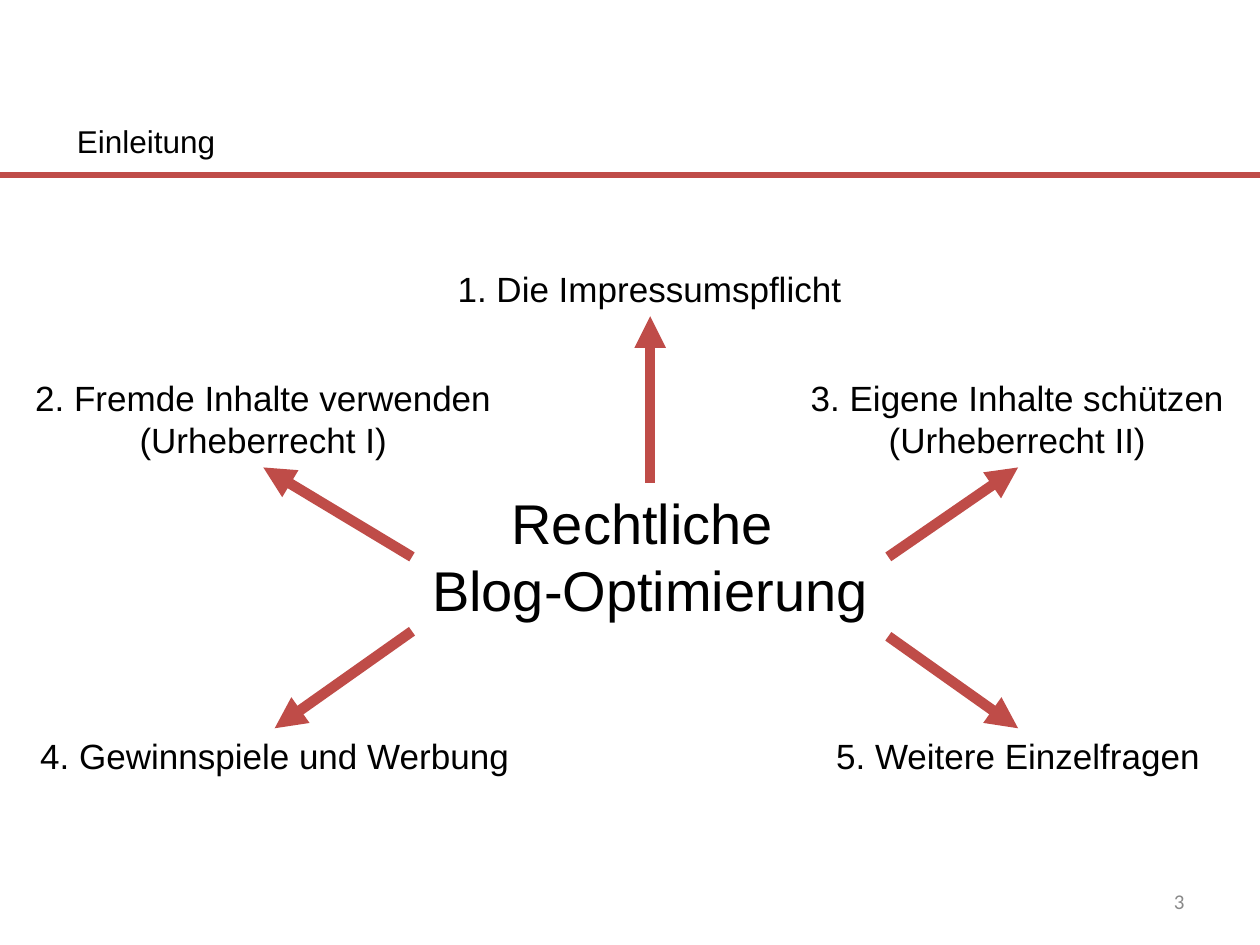
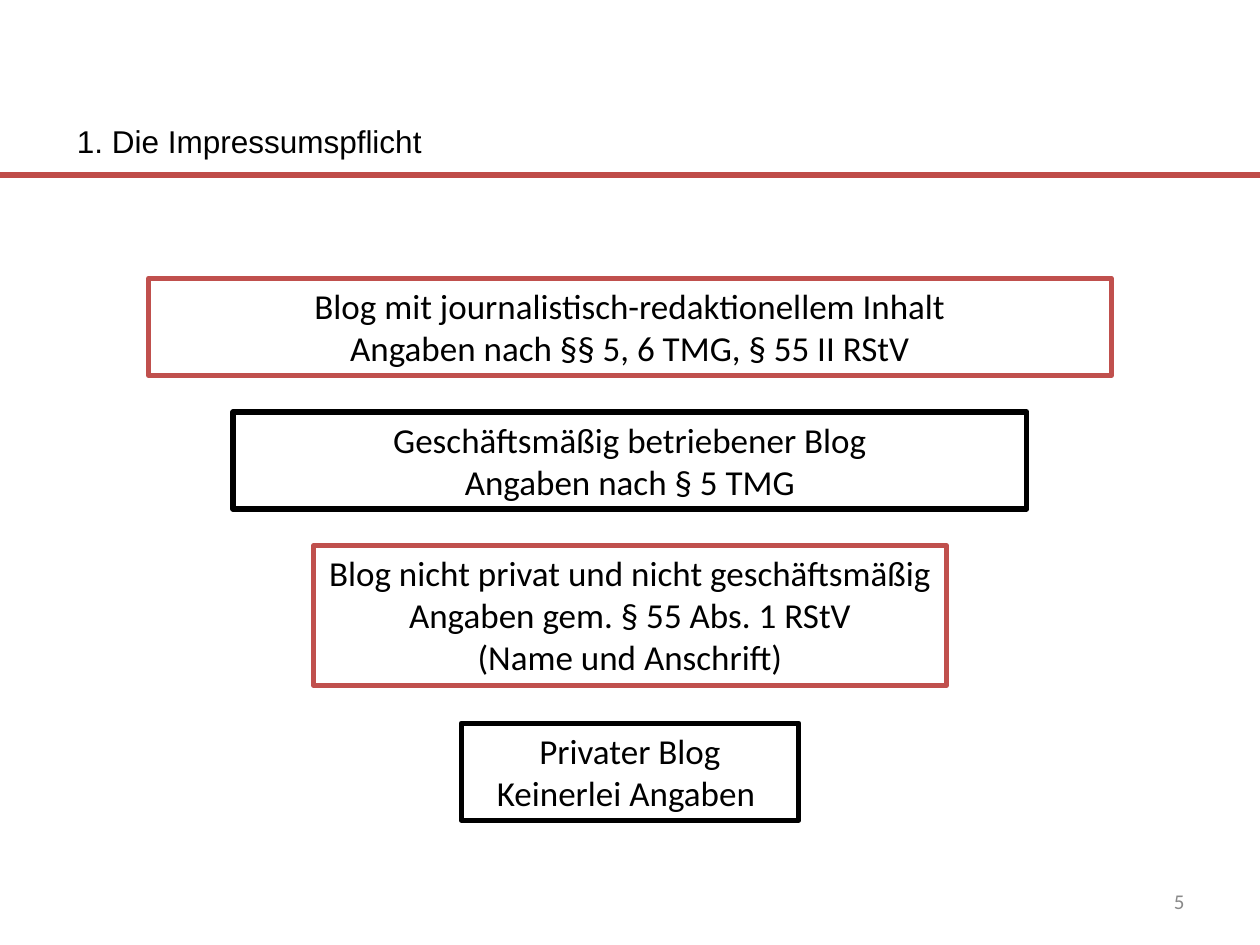
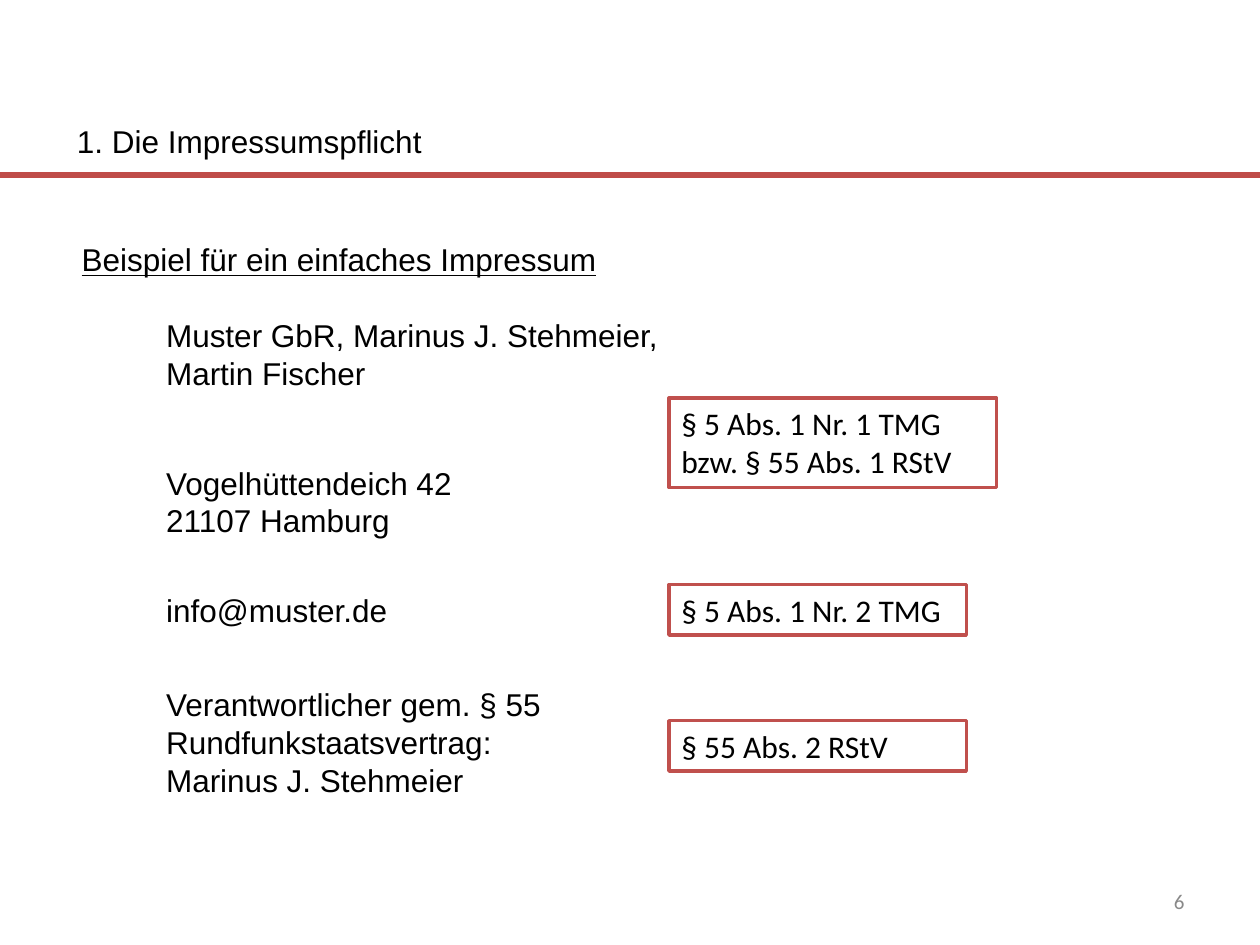
from lxml import etree
from pptx import Presentation
from pptx.dml.color import RGBColor
from pptx.enum.shapes import MSO_CONNECTOR, MSO_SHAPE
from pptx.enum.text import MSO_ANCHOR, MSO_AUTO_SIZE, PP_ALIGN
from pptx.oxml.ns import qn
from pptx.util import Pt

STRAIGHT = MSO_CONNECTOR.STRAIGHT
RECTANGLE = MSO_SHAPE.RECTANGLE
TOP, MIDDLE = MSO_ANCHOR.TOP, MSO_ANCHOR.MIDDLE
NO_AUTOSIZE = MSO_AUTO_SIZE.NONE
LEFT, CENTER, RIGHT = PP_ALIGN.LEFT, PP_ALIGN.CENTER, PP_ALIGN.RIGHT

EMU_PER_PX = 9144  # 100 px to the inch
SLIDE_WIDTH, SLIDE_HEIGHT = 1000, 750
TITLE_ONLY = 5
COLORS = {
    "text": "000000",
    "rule": "BF4C48",
    "frame": "C0504D",
    "number": "898989",
    "paper": "FFFFFF",
}

# Shared text formats
TITLE = {"name": "Arial", "size": Pt(18)}
TOPIC = {"name": "Arial", "size": Pt(20)}
CENTRE = {"name": "Arial", "size": Pt(32)}
HEADING = {"name": "Arial", "size": Pt(18), "underline": True}
BODY = {"name": "Arial", "size": Pt(18)}
STEP = {"name": "Calibri", "size": Pt(20)}
STATUTE = {"name": "Calibri", "size": Pt(18)}
NUMBER = {"name": "Calibri", "size": Pt(12)}


def px(*lengths):
    return [length * EMU_PER_PX for length in lengths]


def rgb(color):
    return RGBColor.from_string(COLORS[color])


def write(shape, lines, format_values, align=LEFT, anchor=TOP, color="text"):
    frame = shape.text_frame
    frame.word_wrap = True
    frame.auto_size = NO_AUTOSIZE
    frame.vertical_anchor = anchor
    frame.text = "\n".join(lines)
    for paragraph in frame.paragraphs:
        paragraph.alignment = align
        for name, value in format_values.items():
            setattr(paragraph.font, name, value)
        paragraph.font.color.rgb = rgb(color)


def add_text(slide, box, lines, format_values, **options):
    write(slide.shapes.add_textbox(*px(*box)), lines, format_values, **options)


def add_frame(slide, box, lines, format_values, line_color, line_width, align=LEFT):
    shape = slide.shapes.add_shape(RECTANGLE, *px(*box))
    shape.shadow.inherit = False
    shape.fill.solid()
    shape.fill.fore_color.rgb = rgb("paper")
    shape.line.color.rgb = rgb(line_color)
    shape.line.width = Pt(line_width)
    write(shape, lines, format_values, align)


def add_line(slide, start, end, width, arrow=False):
    connector = slide.shapes.add_connector(STRAIGHT, *px(*start, *end))
    connector.line.color.rgb = rgb("rule")
    connector.line.width = Pt(width)
    if arrow:
        line_xml = connector.line._get_or_add_ln()
        etree.SubElement(line_xml, qn("a:tailEnd"), type="triangle")
    etree.SubElement(connector._element.spPr, qn("a:effectLst"))


def add_slide(presentation, title, number):
    """Add a slide with the shared rule, title and page number."""
    slide = presentation.slides.add_slide(presentation.slide_layouts[TITLE_ONLY])
    add_line(slide, (0, 139), (SLIDE_WIDTH, 139), 3)
    heading = slide.shapes.title
    heading.left, heading.top, heading.width, heading.height = px(51, 92, 315, 40)
    write(heading, [title], TITLE)
    add_text(slide, (717, 695, 233, 40), [str(number)], NUMBER,
             align=RIGHT, anchor=MIDDLE, color="number")
    return slide


def build_overview(presentation):
    slide = add_slide(presentation, "Einleitung", 3)
    add_text(slide, (327, 383, 378, 118), ["Rechtliche ", "Blog-Optimierung"],
             CENTRE, align=CENTER)
    # Each topic: box, lines, arrow start, arrow end
    topics = [
        ((295, 207, 441, 44), ["1. Die Impressumspflicht"], (516, 383), (516, 251)),
        ((12, 294, 394, 77), ["2. Fremde Inhalte verwenden", "(Urheberrecht I)"],
         (327, 442), (209, 371)),
        ((626, 294, 363, 77), ["3. Eigene Inhalte schützen", "(Urheberrecht II)"],
         (705, 442), (808, 371)),
        ((17, 578, 402, 44), ["4. Gewinnspiele und Werbung"], (327, 501), (218, 578)),
        ((650, 578, 316, 44), ["5. Weitere Einzelfragen"], (705, 505), (808, 578)),
    ]
    for box, lines, start, end in topics:
        add_text(slide, box, lines, TOPIC, align=CENTER)
        add_line(slide, start, end, 6, arrow=True)


def build_funnel(presentation):
    slide = add_slide(presentation, "1. Die Impressumspflicht", 5)
    # Each step: top, width, height, line colour, lines
    steps = [
        (221, 764, 77, "frame", ["Blog mit journalistisch-redaktionellem Inhalt",
                                 "Angaben nach §§ 5, 6 TMG, § 55 II RStV"]),
        (327, 630, 77, "text", ["Geschäftsmäßig betriebener Blog",
                                "Angaben nach § 5 TMG"]),
        (433, 502, 111, "frame", ["Blog nicht privat und nicht geschäftsmäßig",
                                  "Angaben gem. § 55 Abs. 1 RStV",
                                  "(Name und Anschrift)"]),
        (574, 268, 77, "text", ["Privater Blog", "Keinerlei Angaben "]),
    ]
    for top, width, height, line_color, lines in steps:
        left = (SLIDE_WIDTH - width) // 2
        add_frame(slide, (left, top, width, height), lines, STEP, line_color, 3, CENTER)


def build_example(presentation):
    slide = add_slide(presentation, "1. Die Impressumspflicht", 6)
    add_text(slide, (55, 186, 429, 40), ["Beispiel für ein einfaches Impressum"], HEADING)
    # Imprint entries: top, width, height, lines
    entries = [
        (246, 433, 71, ["Muster GbR, Marinus J. Stehmeier, Martin Fischer"]),
        (363, 252, 71, ["Vogelhüttendeich 42", "21107 Hamburg"]),
        (464, 244, 40, ["info@muster.de"]),
        (539, 323, 101, ["Verantwortlicher gem. § 55 Rundfunkstaatsvertrag:",
                         "Marinus J. Stehmeier"]),
    ]
    for top, width, height, lines in entries:
        add_text(slide, (122, top, width, height), lines, BODY)
    # Statutes: top, width, height, text
    statutes = [
        (316, 260, 71, "§ 5 Abs. 1 Nr. 1 TMG bzw. § 55 Abs. 1 RStV"),
        (464, 236, 40, "§ 5 Abs. 1 Nr. 2 TMG"),
        (572, 236, 40, "§ 55 Abs. 2 RStV"),
    ]
    for top, width, height, text in statutes:
        add_frame(slide, (531, top, width, height), [text], STATUTE, "frame", 2)


def main():
    presentation = Presentation()
    presentation.slide_width, presentation.slide_height = px(SLIDE_WIDTH, SLIDE_HEIGHT)
    build_overview(presentation)
    build_funnel(presentation)
    build_example(presentation)
    presentation.save("out.pptx")


if __name__ == "__main__":
    main()
